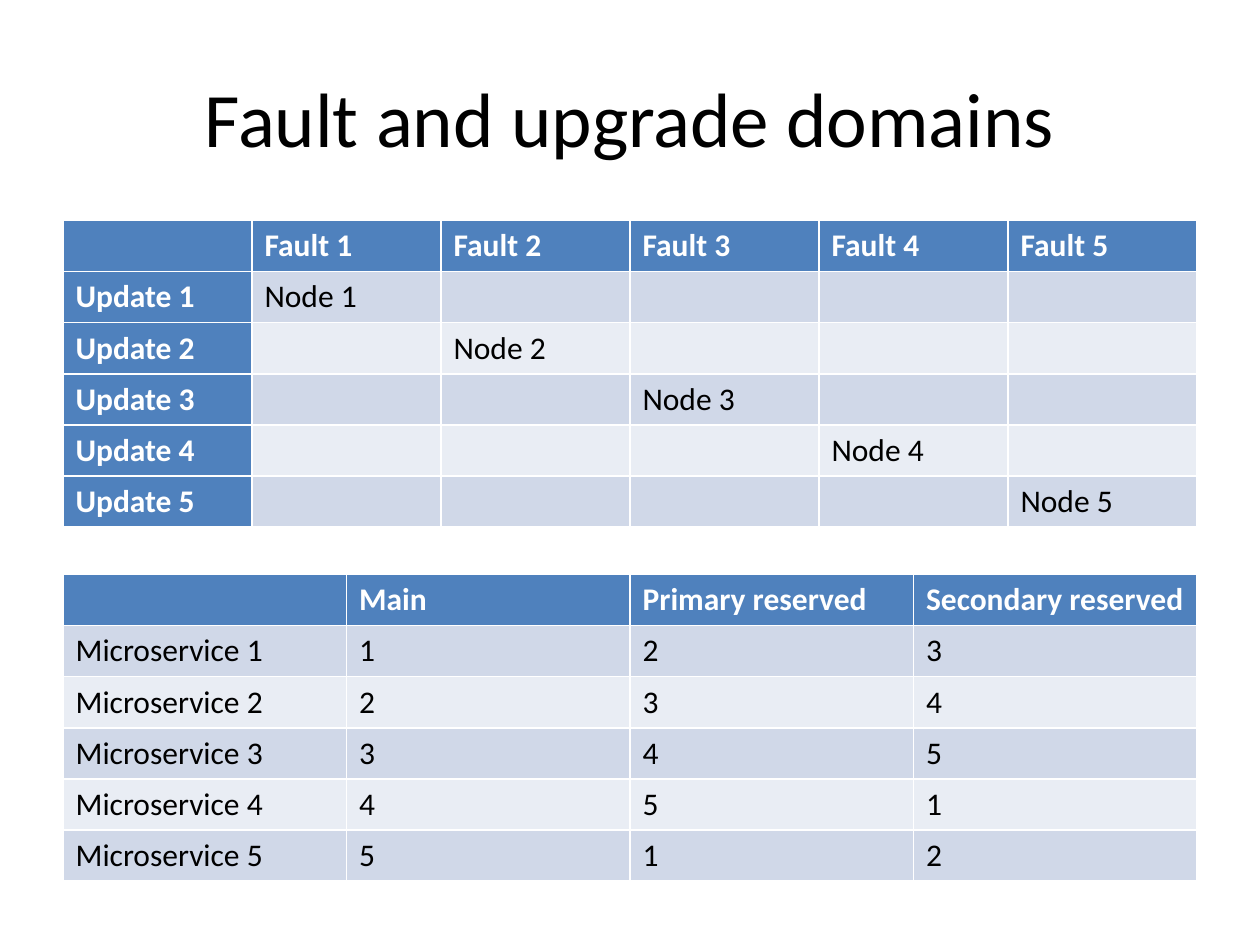
from dataclasses import dataclass

from pptx import Presentation
from pptx.dml.color import RGBColor
from pptx.enum.text import MSO_ANCHOR, PP_ALIGN
from pptx.util import Inches, Pt

CENTER = PP_ALIGN.CENTER
MIDDLE = MSO_ANCHOR.MIDDLE
TITLE_ONLY = 5
COUNT = 5


@dataclass(frozen=True)
class Theme:
    font: str = "Calibri"
    title_size: int = 44
    table_size: int = 18
    text: str = "000000"
    heading_text: str = "FFFFFF"
    heading_fill: str = "4F81BD"
    bands: tuple = ("D0D8E8", "E9EDF4")


class SlideBuilder:
    """Place styled elements on one slide, measured as shares of its size."""

    def __init__(self, presentation, theme):
        self.theme = theme
        self.width = presentation.slide_width
        self.height = presentation.slide_height
        self.slide = presentation.slides.add_slide(presentation.slide_layouts[TITLE_ONLY])

    def box(self, left, top, width, height):
        return (round(left * self.width), round(top * self.height),
                round(width * self.width), round(height * self.height))

    def style(self, paragraph, size, color, bold=False):
        font = paragraph.font
        font.name = self.theme.font
        font.size = Pt(size)
        font.bold = bold
        font.color.rgb = RGBColor.from_string(color)

    def title(self, text, *shares):
        shape = self.slide.shapes.title
        shape.left, shape.top, shape.width, shape.height = self.box(*shares)
        shape.text_frame.text = text
        shape.text_frame.vertical_anchor = MIDDLE
        paragraph = shape.text_frame.paragraphs[0]
        paragraph.alignment = CENTER
        self.style(paragraph, self.theme.title_size, self.theme.text)

    def table(self, rows, *shares, heading_column=False):
        theme = self.theme
        frame = self.slide.shapes.add_table(len(rows), len(rows[0]), *self.box(*shares))
        table = frame.table
        table.first_col = heading_column
        for row, values in enumerate(rows):
            for column, value in enumerate(values):
                heading = row == 0 or (heading_column and column == 0)
                fill = theme.heading_fill if heading else theme.bands[(row - 1) % 2]
                color = theme.heading_text if heading else theme.text
                cell = table.cell(row, column)
                cell.text = value
                cell.fill.solid()
                cell.fill.fore_color.rgb = RGBColor.from_string(fill)
                self.style(cell.text_frame.paragraphs[0], theme.table_size, color, heading)


def main():
    presentation = Presentation()
    presentation.slide_width = Inches(10)
    presentation.slide_height = Inches(7.5)
    builder = SlideBuilder(presentation, Theme())

    numbers = range(1, COUNT + 1)
    domains = [[""] + [f"Fault {fault}" for fault in numbers]]
    domains += [
        [f"Update {update}"] + [f"Node {fault}" if fault == update else "" for fault in numbers]
        for update in numbers
    ]
    replicas = [["", "Main", "Primary reserved", "Secondary reserved"]]
    replicas += [
        [f"Microservice {number}"] + [str((number - 1 + step) % COUNT + 1) for step in range(3)]
        for number in numbers
    ]

    left, width, table_height = 0.05, 0.9, 0.324
    builder.title("Fault and upgrade domains", left, 0.04, width, 1 / 6)
    builder.table(domains, left, 1.75 / 7.5, width, table_height, heading_column=True)
    builder.table(replicas, left, 4.56 / 7.5, width, table_height)
    presentation.save("out.pptx")


if __name__ == "__main__":
    main()
